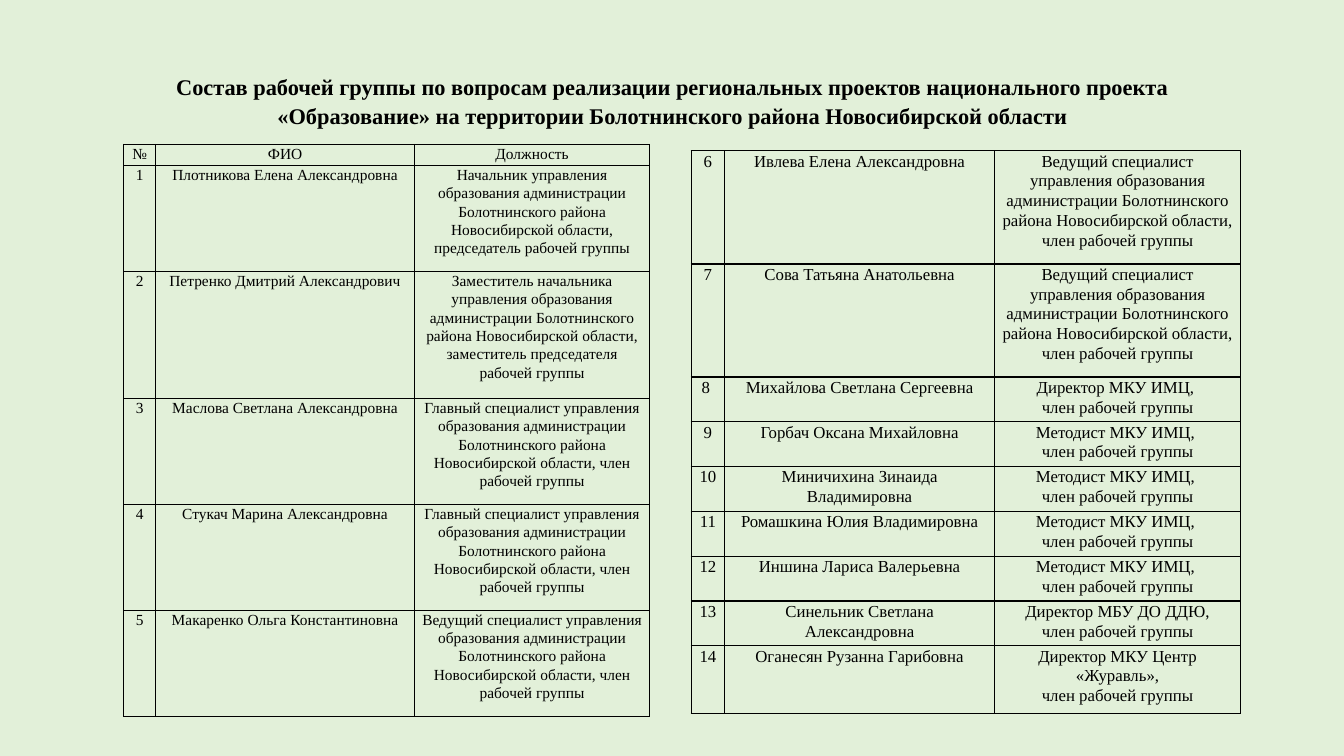
"""Build a slide listing the members of a working group in two tables."""
from lxml.etree import SubElement
from pptx import Presentation
from pptx.dml.color import RGBColor
from pptx.enum.text import MSO_ANCHOR, PP_ALIGN
from pptx.oxml import parse_xml
from pptx.oxml.ns import nsdecls
from pptx.util import Cm, Pt


def color(hex_code):
    return RGBColor.from_string(hex_code)


def write(frame, text, size, bold=False):
    for index, line in enumerate(text.split("\n")):
        para = frame.paragraphs[0] if index == 0 else frame.add_paragraph()
        para.alignment = PP_ALIGN.CENTER
        para.line_spacing = 1.07
        span = para.add_run()
        span.text = line
        span.font.name = "Times New Roman"
        span.font.size = Pt(size)
        span.font.bold = bold
        span.font.color.rgb = color("000000")


REGION = "управления образования администрации Болотнинского района Новосибирской области"
MEMBER = "член рабочей группы"
CHIEF = f"Главный специалист {REGION}, {MEMBER}"
LEADING = f"Ведущий специалист {REGION}, {MEMBER}"
METHODIST = f"Методист МКУ ИМЦ, \n{MEMBER}"

first_members = [
    ("№", "ФИО", "Должность"),
    ("1", "Плотникова Елена Александровна",
     f"Начальник {REGION}, председатель рабочей группы"),
    ("2", "Петренко Дмитрий Александрович",
     f"Заместитель начальника {REGION}, заместитель председателя рабочей группы"),
    ("3", "Маслова Светлана Александровна", CHIEF),
    ("4", "Стукач Марина Александровна", CHIEF),
    ("5", "Макаренко Ольга Константиновна", LEADING),
]
other_members = [
    ("6", "Ивлева Елена Александровна", LEADING),
    ("7", "Сова Татьяна Анатольевна", LEADING),
    ("8 ", "Михайлова Светлана Сергеевна", f"Директор МКУ ИМЦ, \n{MEMBER}"),
    ("9", "Горбач Оксана Михайловна", METHODIST),
    ("10", "Миничихина Зинаида Владимировна", METHODIST),
    ("11", "Ромашкина Юлия Владимировна", METHODIST),
    ("12", "Иншина Лариса Валерьевна", METHODIST),
    ("13", "Синельник Светлана Александровна", f"Директор МБУ ДО ДДЮ,\n{MEMBER}"),
    ("14", "Оганесян Рузанна Гарибовна", f"Директор МКУ Центр «Журавль»,\n{MEMBER}"),
]
tables = [
    (3.12, 3.64, [0.8, 6.53, 5.92], [0.53, 2.67, 3.2] + [2.67] * 3, 11, first_members),
    (17.42, 3.8, [0.84, 6.81, 6.19], [2.85] * 2 + [1.13] * 6 + [1.7], 12, other_members),
]

deck = Presentation()
deck.slide_width, deck.slide_height = Cm(33.87), Cm(19.05)
page = deck.slides.add_slide(deck.slide_layouts[6])
page.background.fill.solid()
page.background.fill.fore_color.rgb = color("E2F0D9")

title = page.shapes.add_textbox(Cm(2.34), Cm(1.14), Cm(29.21), Cm(3.43)).text_frame
title.word_wrap = True
title.vertical_anchor = MSO_ANCHOR.MIDDLE
title.margin_bottom = Cm(0.78)
write(title, "Состав рабочей группы по вопросам реализации региональных проектов "
      "национального проекта «Образование» на территории Болотнинского района "
      "Новосибирской области", 16, bold=True)

for left, top, widths, heights, size, members in tables:
    table = page.shapes.add_table(len(heights), len(widths), Cm(left), Cm(top),
                                  Cm(sum(widths)), Cm(sum(heights))).table
    table.first_row = table.horz_banding = False
    for column, width in zip(table.columns, widths):
        column.width = Cm(width)
    for row, height, member in zip(table.rows, heights, members):
        row.height = Cm(height)
        for cell, text in zip(row.cells, member):
            cell.margin_left = cell.margin_right = Cm(0.16)
            cell.margin_top = cell.margin_bottom = Cm(0)
            cell.fill.background()
            write(cell.text_frame, text, size)
            properties = cell._tc.get_or_add_tcPr()
            for position, side in enumerate(("lnL", "lnR", "lnT", "lnB")):
                border = parse_xml(f'<a:{side} {nsdecls("a")} w="{Pt(1)}"/>')
                fill = SubElement(border, border.tag.replace(side, "solidFill"))
                SubElement(fill, border.tag.replace(side, "srgbClr"), val="000000")
                properties.insert(position, border)

deck.save("out.pptx")
